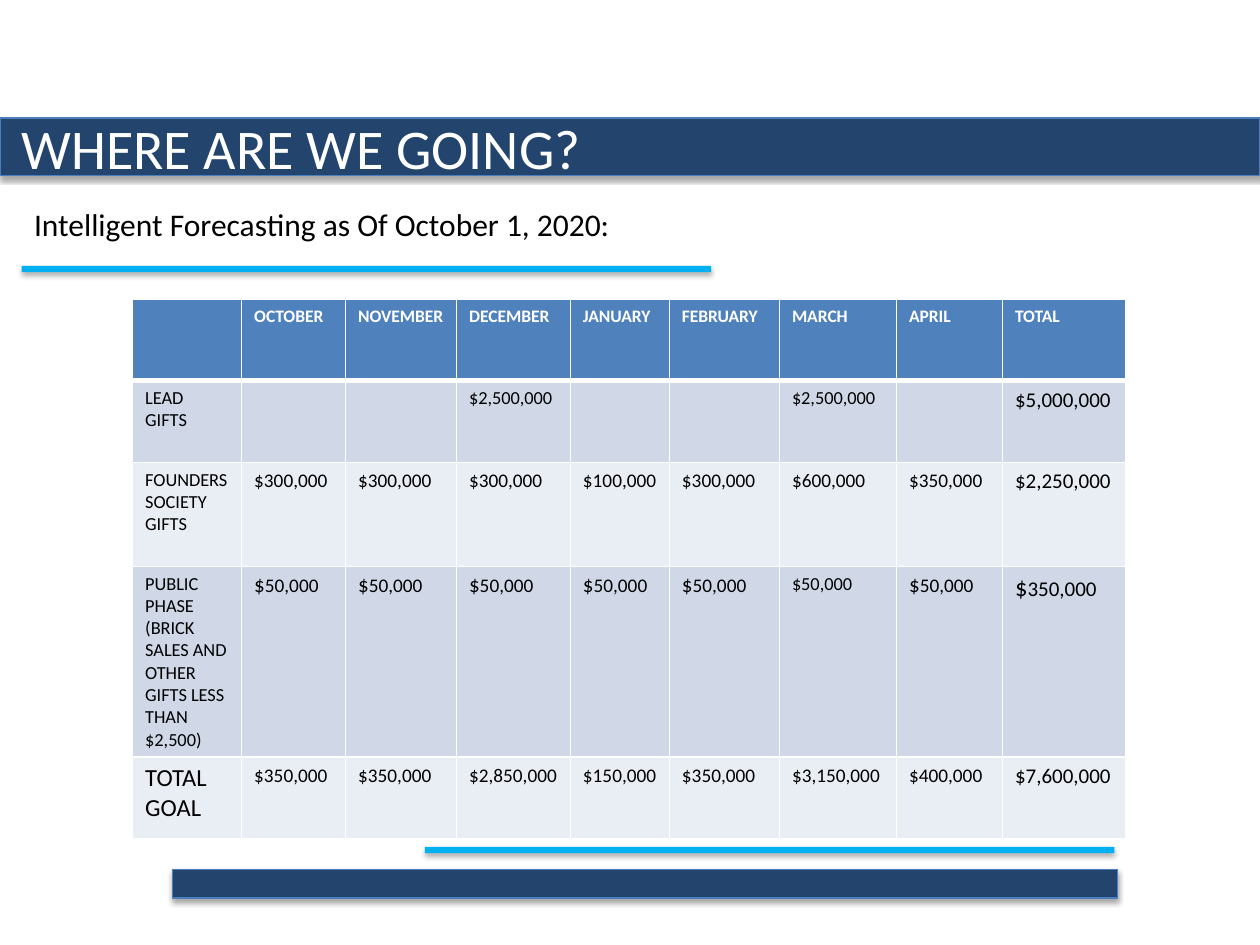
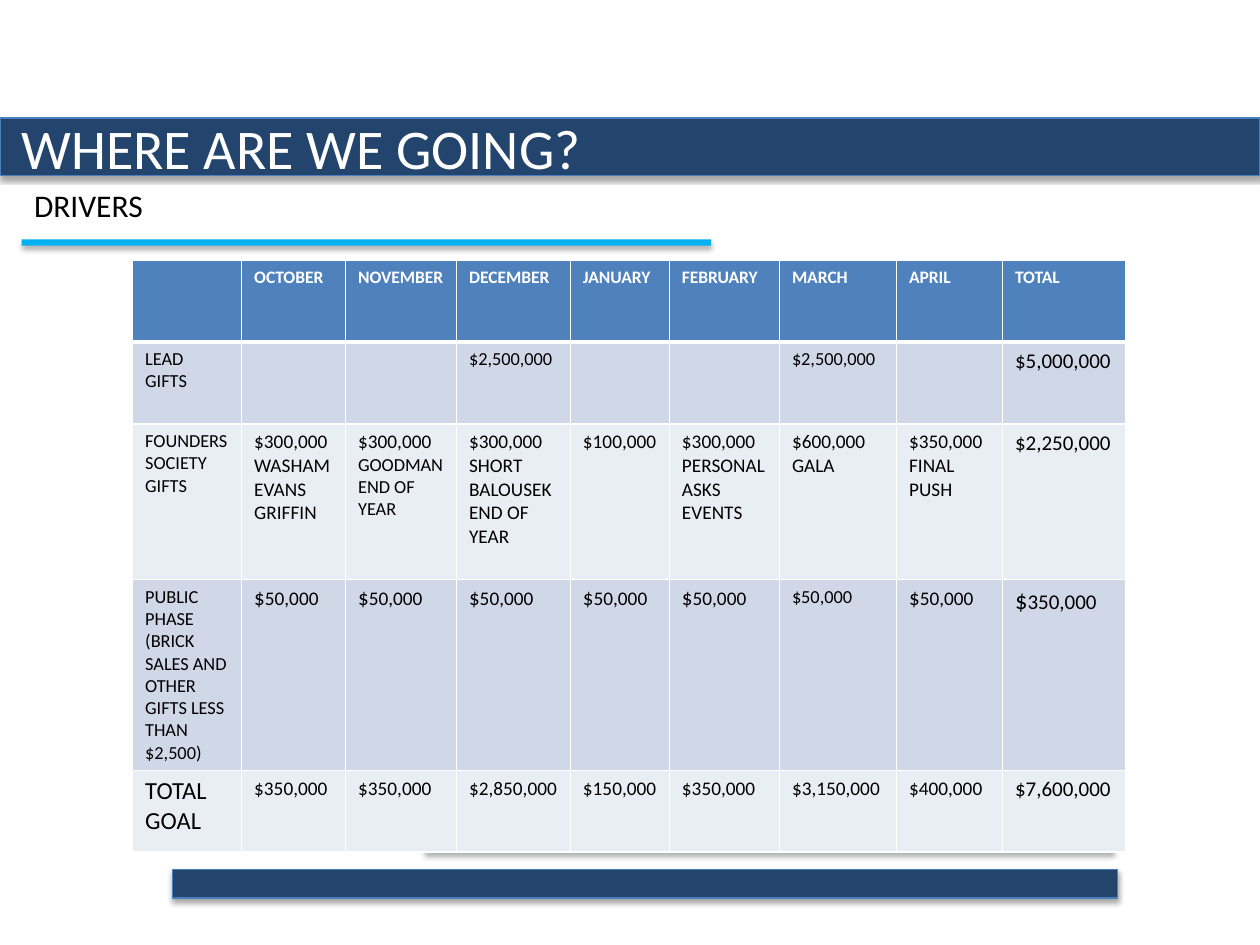
from lxml import etree
from pptx import Presentation
from pptx.dml.color import RGBColor
from pptx.enum.shapes import MSO_SHAPE
from pptx.enum.text import MSO_ANCHOR, MSO_AUTO_SIZE, PP_ALIGN
from pptx.oxml import parse_xml
from pptx.oxml.ns import nsdecls, qn
from pptx.util import Pt

# Shared colours and formats
NAVY, EDGE, SKY = "22446D", "4B7EBC", "00B0F0"
WHITE, BLACK = "FFFFFF", "000000"
HEADER, STRIPES = "4F81BD", ("D0D8E8", "E9EDF4")
BAND_FRAME = {"vertical_anchor": MSO_ANCHOR.MIDDLE, "auto_size": MSO_AUTO_SIZE.NONE,
              "word_wrap": True, "margin_left": Pt(5), "margin_right": Pt(5),
              "margin_top": Pt(3), "margin_bottom": Pt(3)}


def paint(shape, fill, edge=None):
    """Fill and outline a bar and give it the soft shadow below."""
    shape.fill.solid()
    shape.fill.fore_color.rgb = RGBColor.from_string(fill)
    if edge:
        shape.line.color.rgb = RGBColor.from_string(edge)
        shape.line.width = Pt(0.75)
    else:
        shape.line.fill.background()
    shape.shadow.inherit = False
    shape._element.spPr.find(qn("a:effectLst")).append(parse_xml(
        f'<a:outerShdw {nsdecls("a")} blurRad="{Pt(3.1)}" dist="{Pt(1.8)}" dir="5400000" '
        'rotWithShape="0"><a:srgbClr val="000000"><a:alpha val="35000"/></a:srgbClr></a:outerShdw>'))


def write(frame, paragraphs, color, bold=False):
    """Write paragraphs, each a list of (text, size) runs; \\v breaks a line."""
    for row, runs in enumerate(paragraphs):
        paragraph = frame.add_paragraph() if row else frame.paragraphs[0]
        paragraph.alignment = PP_ALIGN.LEFT
        for text, size in runs:
            for part, words in enumerate(text.split("\v")):
                if part:
                    paragraph.add_line_break()
                run = paragraph.add_run()
                run.text = words
                run.font.color.rgb = RGBColor.from_string(color)
                for name, value in {"name": "Calibri", "size": Pt(size), "bold": bold}.items():
                    setattr(run.font, name, value)


# Forecast content: every cell is a list of paragraphs
MONTHS = ["OCTOBER", "NOVEMBER", "DECEMBER", "JANUARY", "FEBRUARY", "MARCH", "APRIL"]
header = [[]] + [[[(name, 10)]] for name in MONTHS + ["TOTAL"]]

lead = [[[("LEAD GIFTS", 10.5)]]]
lead += [[[("$2,500,000", 10.5)]] if month in ("DECEMBER", "MARCH") else [] for month in MONTHS]
lead += [[[("$5,000,000", 12)]]]

public = [[[("PUBLIC PHASE", 10.5)], [("(BRICK SALES AND OTHER GIFTS LESS THAN $2,500)", 10.5)]]]
public += [[[("$50,000", 10.5)]] if month == "MARCH" else [[("$", 12), ("50,000", 11)]]
           for month in MONTHS]
public += [[[("$", 14), ("350,000", 12)]]]

goals = ["$350,000", "$350,000", "$2,850,000", "$150,000", "$350,000", "$3,150,000", "$400,000"]
goal = [[[("TOTAL", 14)], [("GOAL", 14)]]]
goal += [[[(amount, 11)]] for amount in goals] + [[[("$7,600,000", 12)]]]

founder_gifts = ["$300,000", "$300,000", "$300,000", "$100,000", "$300,000", "$600,000", "$350,000"]
drivers = {"OCTOBER": ["WASHAM", "EVANS", "GRIFFIN"],
           "NOVEMBER": ["GOODMAN", "END OF YEAR"],
           "DECEMBER": ["SHORT", "BALOUSEK", "END OF YEAR"],
           "FEBRUARY": ["PERSONAL ASKS", "EVENTS"],
           "MARCH": ["GALA"],
           "APRIL": ["FINAL PUSH"]}

COLUMN_WIDTHS = [62.3, 59.4, 63.4, 65.1, 56.6, 62.9, 66.9, 60.6, 70.3]

# What differs: subtitle, its top, top of rule, top of table, founders row height, drivers
pages = [("Intelligent Forecasting as Of October 1, 2020:", 113.8, 152, 171, 59.3, {}),
         ("DRIVERS", 103, 136.8, 148.8, 89, drivers)]

deck = Presentation()
deck.slide_width, deck.slide_height = Pt(720), Pt(540)

for subtitle, subtitle_top, rule_top, table_top, founders_height, named in pages:
    slide = deck.slides.add_slide(deck.slide_layouts[5])

    # Title band
    title = slide.shapes.title
    for name, value in {"left": 0, "top": Pt(67.5), "width": Pt(720), "height": Pt(33)}.items():
        setattr(title, name, value)
    for name, value in BAND_FRAME.items():
        setattr(title.text_frame, name, value)
    paint(title, NAVY, EDGE)
    write(title.text_frame, [[(" WHERE ARE WE GOING?", 32)]], WHITE)

    # Footer band and the two rules
    for left, top, width, height, fill, edge in [(98.5, 496.8, 540, 16.3, NAVY, EDGE),
                                                 (12.4, rule_top, 394, 3.6, SKY, None),
                                                 (242.8, 484, 394, 3.6, SKY, None)]:
        bar = slide.shapes.add_shape(MSO_SHAPE.RECTANGLE, Pt(left), Pt(top), Pt(width), Pt(height))
        paint(bar, fill, edge)

    # Forecast table
    founders = [[[("FOUNDERS\vSOCIETY GIFTS", 10.5)]]]
    for month, amount in zip(MONTHS, founder_gifts):
        driver_size = 10.5 if month == "NOVEMBER" else 11
        founders.append([[(amount, 11)]] + [[(who, driver_size)] for who in named.get(month, [])])
    founders.append([[("$2,250,000", 12)]])

    rows = [header, lead, founders, public, goal]
    heights = [46.6, 46.8, founders_height, 108.5, 46.8]
    forecast = slide.shapes.add_table(len(rows), len(COLUMN_WIDTHS), Pt(75.8), Pt(table_top),
                                      Pt(sum(COLUMN_WIDTHS)), Pt(sum(heights))).table
    for column, width in zip(forecast.columns, COLUMN_WIDTHS):
        column.width = Pt(width)
    for r, (cells, height) in enumerate(zip(rows, heights)):
        forecast.rows[r].height = Pt(height)
        for c, paragraphs in enumerate(cells):
            cell = forecast.cell(r, c)
            borders = cell._tc.get_or_add_tcPr()
            for side in "LRTB":
                thick = (r == 0 and side == "B") or (r == 1 and side == "T")
                border = etree.SubElement(borders, qn(f"a:ln{side}"), w=str(Pt(3 if thick else 1)))
                solid = etree.SubElement(border, qn("a:solidFill"))
                etree.SubElement(solid, qn("a:srgbClr"), val=WHITE)
            cell.fill.solid()
            cell.fill.fore_color.rgb = RGBColor.from_string(STRIPES[(r - 1) % 2] if r else HEADER)
            write(cell.text_frame, paragraphs, BLACK if r else WHITE, bold=r == 0)

    # Subtitle
    caption = slide.shapes.add_textbox(Pt(12.4), Pt(subtitle_top), Pt(450.7), Pt(29))
    caption.text_frame.word_wrap = True
    write(caption.text_frame, [[(subtitle, 18)]], BLACK)

deck.save("out.pptx")
